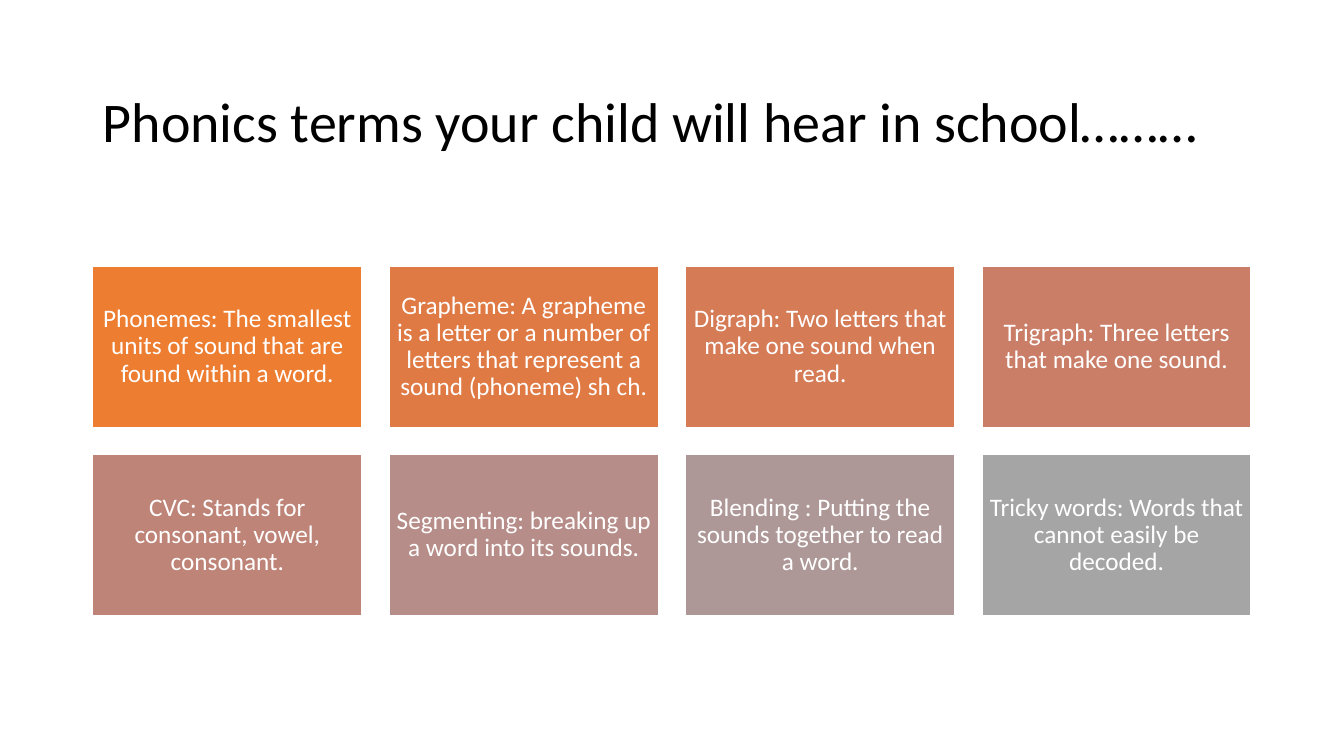
import pptx
import pptx.util
import pptx.dml.color
import pptx.enum.shapes
import pptx.enum.text

Inches = pptx.util.Inches
Pt = pptx.util.Pt

COLORS = {"ink": "000000", "paper": "FFFFFF"}
FONT = "Calibri"
COLS = 4
TERMS = [
    ("Phonemes: The smallest units of sound that are found within a word.", "ED7D31"),
    ("Grapheme: A grapheme is a letter or a number of letters that represent "
     "a sound (phoneme) sh ch.", "E07A44"),
    ("Digraph: Two letters that make one sound when read.", "D57B56"),
    ("Trigraph: Three letters that make one sound.", "CA7E67"),
    ("CVC: Stands for consonant, vowel, consonant.", "BF8478"),
    ("Segmenting: breaking up a word into its sounds.", "B68D88"),
    ("Blending : Putting the sounds together to read a word.", "AD9897"),
    ("Tricky words: Words that cannot easily be decoded.", "A5A5A5"),
]


def tint(code):
    """Turn a hex string into a colour."""
    return pptx.dml.color.RGBColor.from_string(code)


def write(shape, text, size, color, align):
    """Put one styled paragraph in the middle of a shape."""
    frame = shape.text_frame
    frame.text = text
    frame.word_wrap = True
    frame.auto_size = pptx.enum.text.MSO_AUTO_SIZE.NONE
    frame.vertical_anchor = pptx.enum.text.MSO_ANCHOR.MIDDLE
    para = frame.paragraphs[0]
    para.alignment = align
    para.line_spacing = 0.9
    para.space_after = Pt(6)
    para.font.name = FONT
    para.font.size = Pt(size)
    para.font.color.rgb = tint(color)


def add_title(slide, left, top, width, height):
    """Place the heading in the title placeholder."""
    title = slide.shapes.title
    title.left, title.top = Inches(left), Inches(top)
    title.width, title.height = Inches(width), Inches(height)
    write(title, "Phonics terms your child will hear in school………", 40,
          COLORS["ink"], pptx.enum.text.PP_ALIGN.LEFT)


def add_tile(slide, left, top, width, height, text, fill):
    """Draw one term on its coloured tile."""
    tile = slide.shapes.add_shape(
        pptx.enum.shapes.MSO_SHAPE.RECTANGLE,
        Inches(left), Inches(top), Inches(width), Inches(height))
    tile.shadow.inherit = False
    tile.fill.solid()
    tile.fill.fore_color.rgb = tint(fill)
    tile.line.color.rgb = tint(COLORS["paper"])
    tile.line.width = Pt(1)
    frame = tile.text_frame
    frame.margin_left = frame.margin_right = Inches(0.07)
    frame.margin_top = frame.margin_bottom = Inches(0.07)
    write(tile, text, 18, COLORS["paper"], pptx.enum.text.PP_ALIGN.CENTER)


def add_grid(slide, left, top, width, height, gap):
    """Fill a box with the tiles, row by row."""
    rows = len(TERMS) // COLS
    wide = (width - gap * (COLS - 1)) / COLS
    high = (height - gap * (rows - 1)) / rows
    for index, (text, fill) in enumerate(TERMS):
        row, col = divmod(index, COLS)
        add_tile(slide, left + col * (wide + gap), top + row * (high + gap),
                 wide, high, text, fill)


def main():
    """Build the slide and save it."""
    deck = pptx.Presentation()
    deck.slide_width, deck.slide_height = Inches(13.33), Inches(7.5)
    slide = deck.slides.add_slide(deck.slide_layouts[5])
    add_title(slide, 0.92, 0.61, 11.5, 1.24)
    add_grid(slide, 0.92, 2.64, 11.49, 3.47, 0.27)
    deck.save("out.pptx")


if __name__ == "__main__":
    main()
